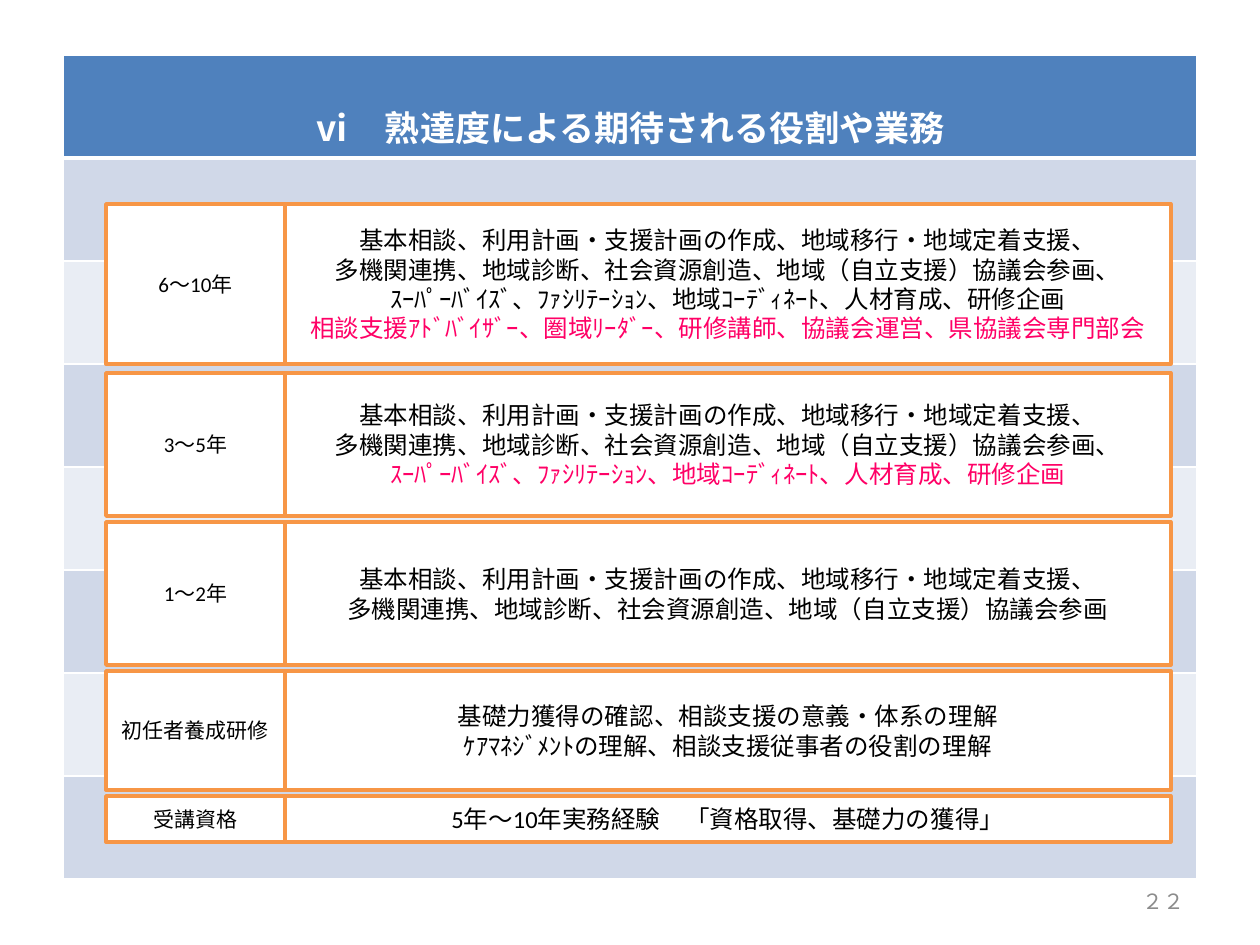
from lxml.etree import SubElement
from pptx import Presentation
from pptx.dml.color import RGBColor
from pptx.enum.shapes import MSO_SHAPE as Shape
from pptx.enum.text import MSO_ANCHOR as Anchor, PP_ALIGN as Align
from pptx.oxml.ns import qn
from pptx.util import Emu, Pt

PX = 914400 // 126
COLORS = {
    "white": "FFFFFF", "header": "4F81BD", "band_dark": "D0D8E8",
    "band_light": "E9EDF4", "orange": "F79646", "black": "000000",
    "pink": "FF0066", "gray": "8C8C8C",
}
BASIC = "基本相談、利用計画・支援計画の作成、地域移行・地域定着支援、"
NETWORK = "多機関連携、地域診断、社会資源創造、地域（自立支援）協議会参画"
TRAINING = "ｽｰﾊﾟｰﾊﾞｲｽﾞ、ﾌｧｼﾘﾃｰｼｮﾝ、地域ｺｰﾃﾞｨﾈｰﾄ、人材育成、研修企画"
ADVISING = "相談支援ｱﾄﾞﾊﾞｲｻﾞｰ、圏域ﾘｰﾀﾞｰ、研修講師、協議会運営、県協議会専門部会"

# top, height, stage, duties, whether the last duty is highlighted
STAGES = [
    (204, 160, "6～10年", [BASIC, NETWORK + "、", TRAINING, ADVISING], True),
    (373, 143, "3～5年", [BASIC, NETWORK + "、", TRAINING], True),
    (522, 143, "1～2年", [BASIC, NETWORK], False),
    (671, 119, "初任者養成研修",
     ["基礎力獲得の確認、相談支援の意義・体系の理解",
      "ｹｱﾏﾈｼﾞﾒﾝﾄの理解、相談支援従事者の役割の理解"], False),
    (796, 46, "受講資格", ["5年～10年実務経験　「資格取得、基礎力の獲得」"], False),
]


def rgb(name):
    return RGBColor.from_string(COLORS[name])


def px(*lengths):
    return [Emu(length * PX) for length in lengths]


class SlideBuilder:
    font_name = "Calibri"

    def __init__(self, slide):
        self.slide = slide

    def set_text(self, frame, lines, size, color="black", align=Align.CENTER,
                 bold=False, last_color=None):
        for index, line in enumerate(lines):
            paragraph = frame.paragraphs[0] if index == 0 else frame.add_paragraph()
            paragraph.text = line
            paragraph.alignment = align
            font = paragraph.font
            font.name, font.size, font.bold = self.font_name, Pt(size), bold
            is_last = index == len(lines) - 1
            font.color.rgb = rgb(last_color if is_last and last_color else color)

    def border(self, cell, side, width):
        line = SubElement(cell._tc.get_or_add_tcPr(), qn(f"a:{side}"), w=str(Pt(width)))
        fill = SubElement(line, qn("a:solidFill"))
        SubElement(fill, qn("a:srgbClr"), val=COLORS["white"])

    def banded_table(self, left, top, width, row_height, rows, title):
        """Draw a one-column table with a title row above empty bands."""
        frame = self.slide.shapes.add_table(
            rows, 1, *px(left, top, width, row_height * rows))
        for index in range(rows):
            cell = frame.table.cell(index, 0)
            for side in ("lnL", "lnR", "lnT", "lnB"):
                thick = (index, side) in ((0, "lnB"), (1, "lnT"))
                self.border(cell, side, 3 if thick else 1)
            cell.fill.solid()
            band = "band_dark" if index % 2 else "band_light"
            cell.fill.fore_color.rgb = rgb(band if index else "header")
        header = frame.table.cell(0, 0)
        header.vertical_anchor = Anchor.BOTTOM
        self.set_text(header.text_frame, [title], 20, "white", bold=True)

    def box(self, left, top, width, height, lines, size, last_color=None):
        shape = self.slide.shapes.add_shape(
            Shape.RECTANGLE, *px(left, top, width, height))
        shape.shadow.inherit = False
        shape.fill.solid()
        shape.fill.fore_color.rgb = rgb("white")
        shape.line.color.rgb = rgb("orange")
        shape.line.width = Pt(2)
        shape.text_frame.vertical_anchor = Anchor.MIDDLE
        self.set_text(shape.text_frame, lines, size, last_color=last_color)

    def page_number(self, left, top, width, height, text):
        frame = self.slide.shapes.add_textbox(*px(left, top, width, height)).text_frame
        frame.word_wrap = True
        frame.vertical_anchor = Anchor.MIDDLE
        self.set_text(frame, [text], 12, "gray", Align.RIGHT)


def main():
    presentation = Presentation()
    presentation.slide_width, presentation.slide_height = px(1260, 945)
    builder = SlideBuilder(presentation.slides.add_slide(presentation.slide_layouts[6]))
    builder.banded_table(63, 55, 1134, 103, 8, "ⅵ　熟達度による期待される役割や業務")
    for top, height, stage, duties, highlighted in STAGES:
        builder.box(106, top, 179, height, [stage], 12)
        builder.box(285, top, 886, height, duties, 14, "pink" if highlighted else None)
    builder.page_number(903, 876, 294, 50, "２２")
    presentation.save("out.pptx")


if __name__ == "__main__":
    main()
